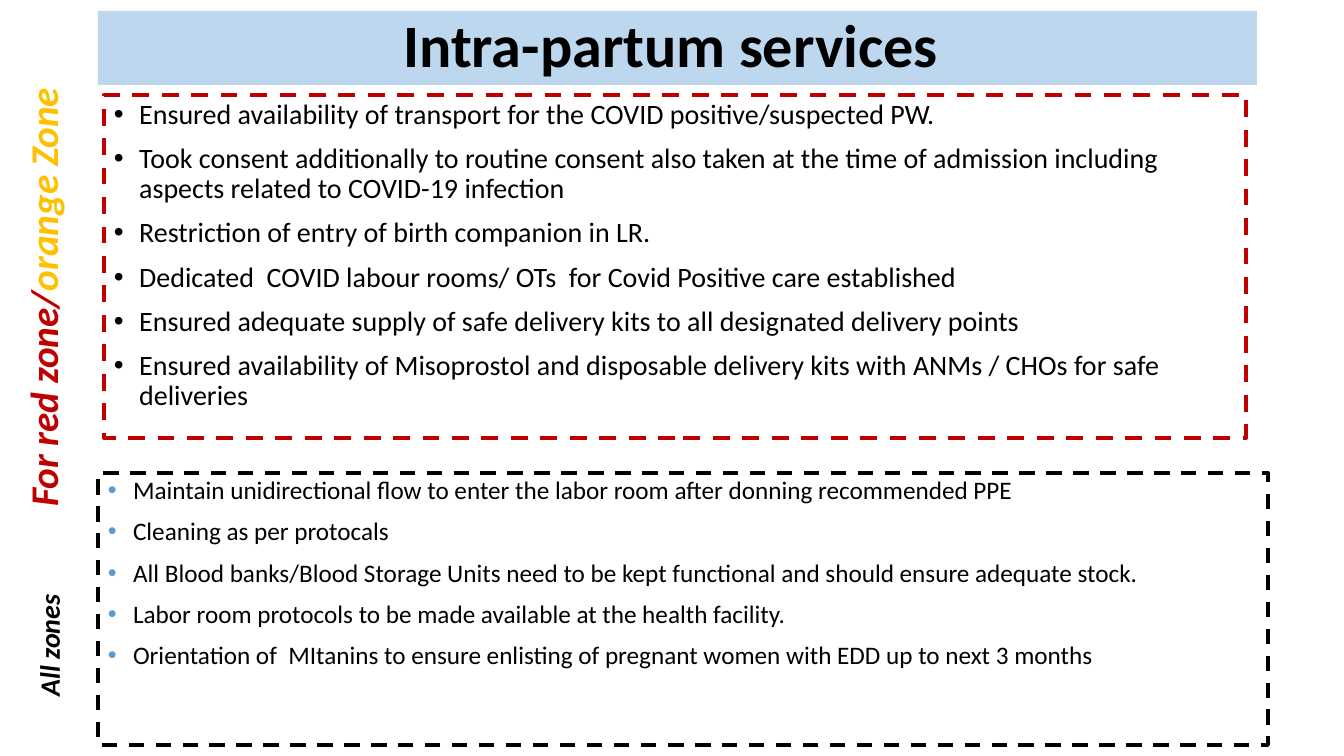
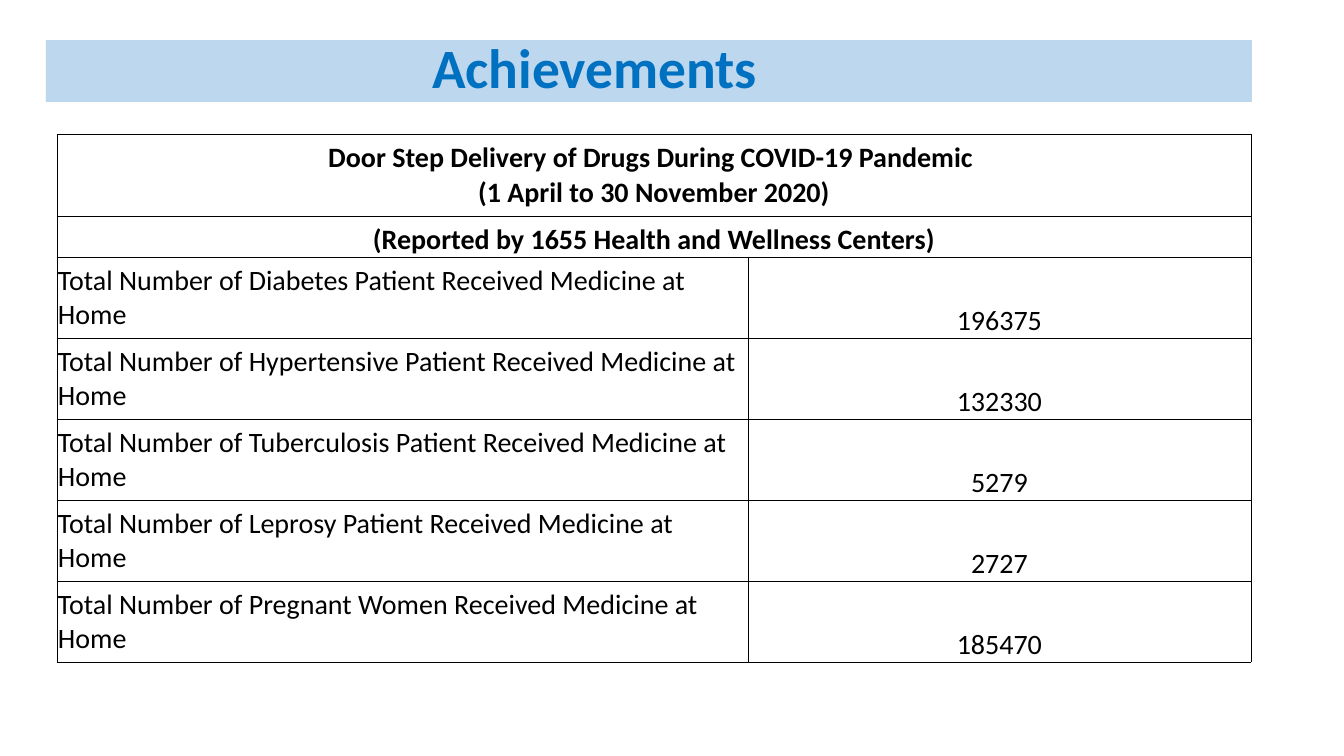
"""Build two slides on intra-partum services and medicine delivery."""
from lxml import etree
from pptx import Presentation, oxml
from pptx import util as u
from pptx.dml.color import RGBColor
from pptx.enum import dml, shapes, text

PX = 914400 / 100.8
FONT = "Calibri"
COLOURS = {
    "band": "BDD7EE",
    "ink": "000000",
    "heading": "0070C0",
    "red": "C00000",
    "orange": "FFC000",
    "bullet": "5B9BD5",
}
A = "http://schemas.openxmlformats.org/drawingml/2006/main"


def px(*lengths):
    return [u.Emu(round(length * PX)) for length in lengths]


def add_run(paragraph, wording, size, colour="ink", bold=False, italic=False):
    run = paragraph.add_run()
    run.text = wording
    run.font.name = FONT
    run.font.size = u.Pt(size)
    run.font.bold = bold
    run.font.italic = italic
    run.font.color.rgb = RGBColor.from_string(COLOURS[colour])


prs = Presentation()
prs.slide_width, prs.slide_height = px(1344, 756)

headings = [
    ("Intra-partum services ", (98, 11, 1159, 74), 43, "ink", text.PP_ALIGN.CENTER, 10),
    ("Achievements", (46, 40, 1206, 62), 39.6, "heading", text.PP_ALIGN.LEFT, 386),
]
slides = []
for wording, place, size, colour, align, inset in headings:
    slide = prs.slides.add_slide(prs.slide_layouts[5])
    slides.append(slide)
    title = slide.shapes.title
    title.left, title.top, title.width, title.height = px(*place)
    title.fill.solid()
    title.fill.fore_color.rgb = RGBColor.from_string(COLOURS["band"])
    frame = title.text_frame
    frame.auto_size = text.MSO_AUTO_SIZE.NONE
    frame.vertical_anchor = text.MSO_ANCHOR.MIDDLE
    frame.margin_left = px(inset)[0]
    paragraph = frame.paragraphs[0]
    paragraph.alignment = align
    paragraph.line_spacing = 0.9
    add_run(paragraph, wording, size, colour, bold=True)
services, achievements = slides

zone_measures = [
    ((104, 95, 1142, 343), "red", 3, 20, "ink", [
        "Ensured availability of transport for the COVID positive/suspected PW.",
        "Took consent additionally to routine consent also taken at the time of admission "
        "including aspects related to COVID-19 infection",
        "Restriction of entry of birth companion in LR.",
        "Dedicated  COVID labour rooms/ OTs  for Covid Positive care established",
        "Ensured adequate supply of safe delivery kits to all designated delivery points",
        "Ensured availability of Misoprostol and disposable delivery kits with ANMs / CHOs "
        "for safe deliveries",
    ]),
    ((98, 473, 1170, 272), "ink", 2.75, 18, "bullet", [
        "Maintain unidirectional flow to enter the labor room after donning recommended PPE",
        "Cleaning as per protocals",
        "All Blood banks/Blood Storage Units need to be kept functional and should ensure "
        "adequate stock.",
        "Labor room protocols to be made available at the health facility.",
        "Orientation of  MItanins to ensure enlisting of pregnant women with EDD up to next "
        "3 months",
    ]),
]
for place, outline, weight, size, bullet_colour, measures in zone_measures:
    panel = services.shapes.add_shape(shapes.MSO_SHAPE.RECTANGLE, *px(*place))
    panel.shadow.inherit = False
    panel.fill.background()
    panel.line.color.rgb = RGBColor.from_string(COLOURS[outline])
    panel.line.width = u.Pt(weight)
    panel.line.dash_style = dml.MSO_LINE.DASH
    frame = panel.text_frame
    frame.word_wrap = True
    frame.vertical_anchor = text.MSO_ANCHOR.TOP
    for i, measure in enumerate(measures):
        paragraph = frame.add_paragraph() if i else frame.paragraphs[0]
        paragraph.alignment = text.PP_ALIGN.LEFT
        paragraph.line_spacing = 0.9
        paragraph.space_before = u.Pt(10)
        properties = paragraph._p.get_or_add_pPr()
        properties.set("marL", "228600")
        properties.set("indent", "-228600")
        colour = etree.SubElement(properties, f"{{{A}}}buClr")
        etree.SubElement(colour, f"{{{A}}}srgbClr", val=COLOURS[bullet_colour])
        etree.SubElement(properties, f"{{{A}}}buFont", typeface="Arial")
        etree.SubElement(properties, f"{{{A}}}buChar", char="•")
        add_run(paragraph, measure, size)

zone_labels = [
    ((14, 67, 68, 461), 28, True, [("For red zone/", "red"), ("orange Zone", "orange")]),
    ((27, 589, 54, 113), 20, False, [("All zones", "ink")]),
]
for place, size, wraps, parts in zone_labels:
    label = services.shapes.add_textbox(*px(*place))
    frame = label.text_frame
    frame.word_wrap = wraps
    frame.auto_size = text.MSO_AUTO_SIZE.SHAPE_TO_FIT_TEXT
    label.element.txBody.bodyPr.set("vert", "vert270")
    frame.paragraphs[0].alignment = text.PP_ALIGN.CENTER
    for wording, colour in parts:
        add_run(frame.paragraphs[0], wording, size, colour, bold=True, italic=True)

patients = [
    ("Diabetes Patient", "196375"),
    ("Hypertensive Patient", "132330"),
    ("Tuberculosis Patient", "5279"),
    ("Leprosy Patient", "2727"),
    ("Pregnant Women", "185470"),
]
delivery_rows = [
    (["Door Step Delivery of Drugs During COVID-19 Pandemic ", "(1 April to 30 November 2020)"], ""),
    (["(Reported by 1655 Health and Wellness Centers)"], ""),
]
for group, count in patients:
    delivery_rows.append(([f"Total Number of {group} Received Medicine at Home"], count))

row_heights = [82, 41] + [81] * len(patients)
column_widths = [691, 503]
deliveries = achievements.shapes.add_table(
    len(delivery_rows), 2, *px(57, 134, sum(column_widths), sum(row_heights))
).table
deliveries.first_row = False
deliveries.horz_banding = False
for column, width in zip(deliveries.columns, px(*column_widths)):
    column.width = width
for row, height in zip(deliveries.rows, px(*row_heights)):
    row.height = height

for r, (lines, count) in enumerate(delivery_rows):
    heads = r < 2
    if heads:
        deliveries.cell(r, 0).merge(deliveries.cell(r, 1))
    for c, contents in enumerate([lines, [count]]):
        cell = deliveries.cell(r, c)
        cell.fill.background()
        cell.margin_left, cell.margin_right, cell.margin_top, cell.margin_bottom = px(1, 1, 1, 0)
        at_bottom = c == 1 or r == 1
        cell.vertical_anchor = text.MSO_ANCHOR.BOTTOM if at_bottom else text.MSO_ANCHOR.MIDDLE
        for i, side in enumerate("LRTB"):
            border = oxml.parse_xml(
                f'<a:ln{side} xmlns:a="{A}" w="6350"><a:solidFill>'
                f'<a:srgbClr val="{COLOURS["ink"]}"/></a:solidFill></a:ln{side}>'
            )
            cell._tc.get_or_add_tcPr().insert(i, border)
        if cell.is_spanned:
            continue
        paragraph = cell.text_frame.paragraphs[0]
        paragraph.alignment = text.PP_ALIGN.CENTER if heads or c else text.PP_ALIGN.LEFT
        for i, line in enumerate(contents):
            if i:
                paragraph.add_line_break()
            add_run(paragraph, line, 20, bold=heads)

prs.save("out.pptx")
